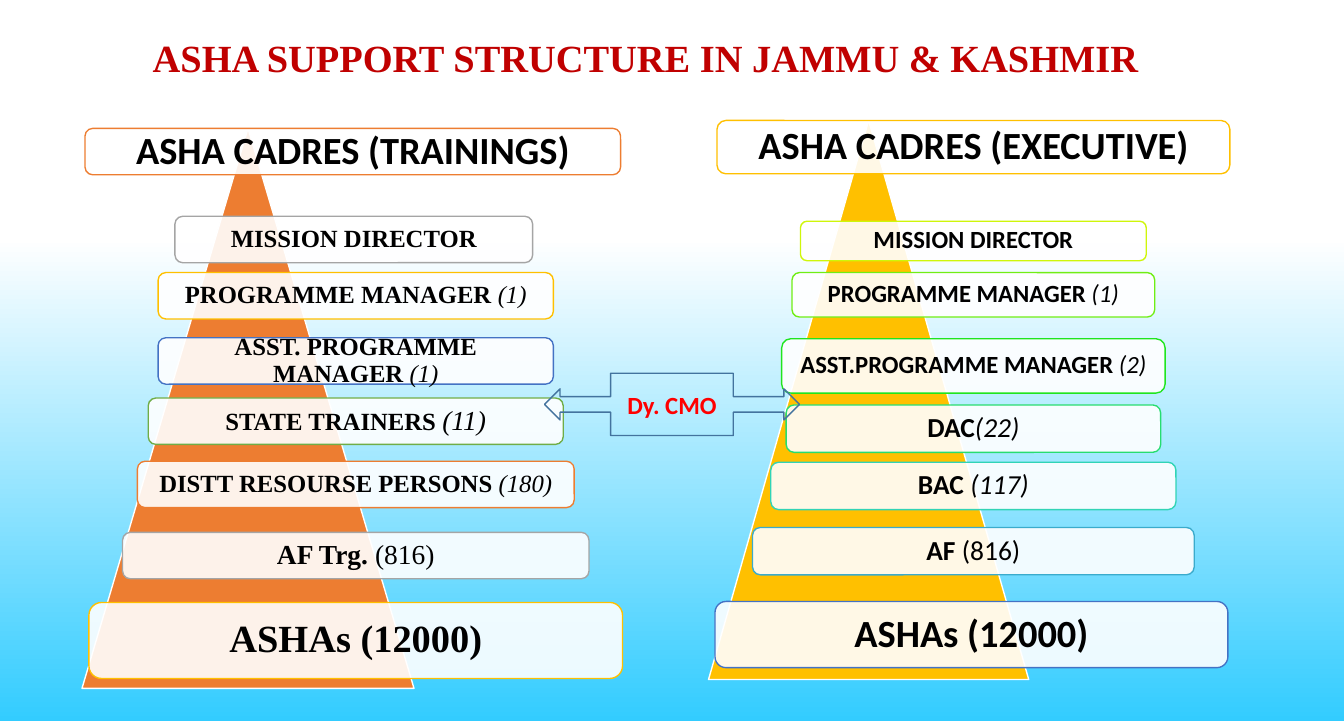
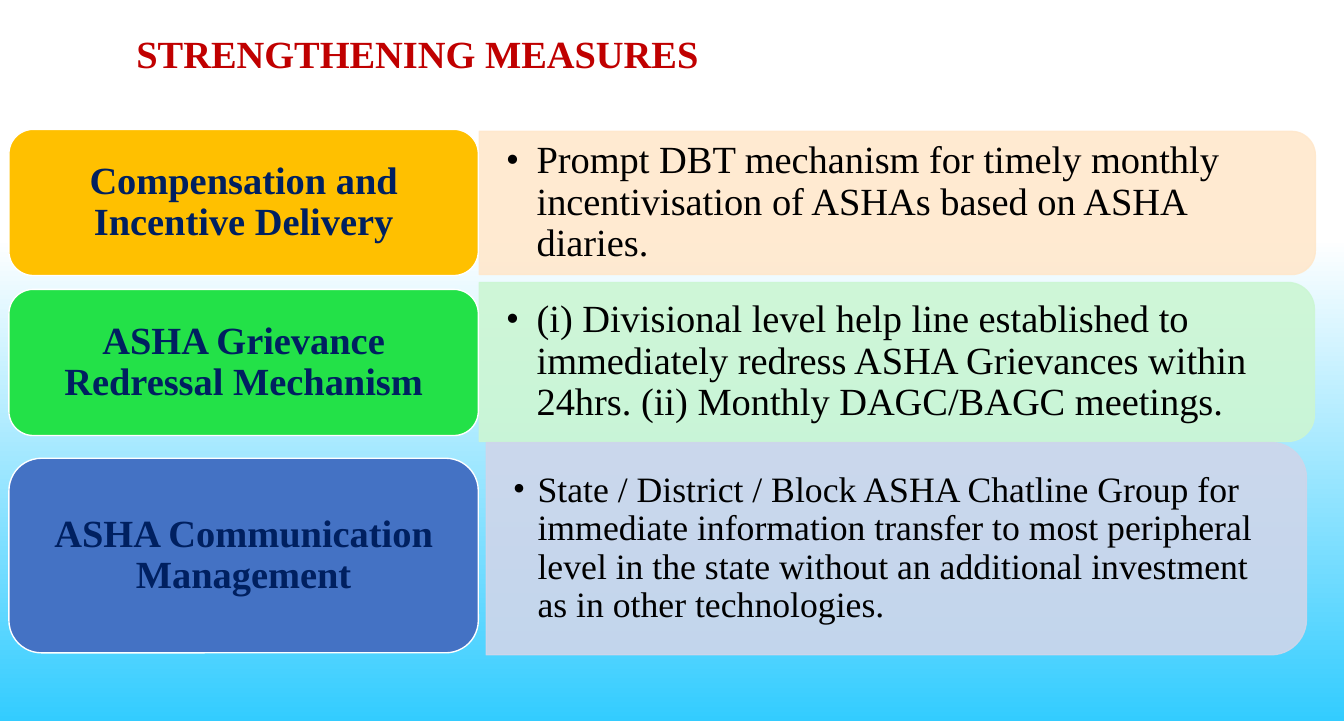
from dataclasses import dataclass
from typing import Optional

from lxml.etree import SubElement
from pptx import Presentation
from pptx.dml.color import RGBColor
from pptx.enum.shapes import MSO_SHAPE
from pptx.enum.text import MSO_ANCHOR, MSO_AUTO_SIZE, PP_ALIGN
from pptx.oxml.ns import qn
from pptx.util import Inches, Pt


# Theme
@dataclass(frozen=True)
class Theme:
    serif: str = "Times New Roman"
    sans: str = "Calibri"
    white: str = "FFFFFF"
    black: str = "000000"
    sky: str = "33CCFF"
    title: str = "C00000"
    navy: str = "002060"
    red: str = "FF0000"
    steel: str = "43739E"
    orange: str = "ED7D31"
    gold: str = "FFC000"
    grey: str = "A5A5A5"
    blue: str = "4472C4"
    green: str = "70AD47"
    large: int = 28
    list_small: int = 26
    medium: int = 20
    small: int = 18
    spacing: float = 0.9
    opacity: int = 90


T = Theme()


@dataclass(frozen=True)
class Tier:
    label: str
    count: str
    top: float
    width: float
    height: float
    line: str
    size: int = T.small
    count_size: Optional[int] = None
    count_italic: bool = True
    font: Optional[str] = None
    shift: float = 0


@dataclass(frozen=True)
class Pyramid:
    left: float
    top: float
    width: float
    height: float
    fill: str
    centre: float
    font: str
    tiers: tuple[Tier, ...]


@dataclass(frozen=True)
class Measure:
    label: str
    detail: str
    label_top: float
    label_height: float
    fill: str
    left: float
    top: float
    width: float
    height: float
    tint: str
    size: int = T.large
    indent: float = 0.31


PYRAMIDS = (
    Pyramid(0.83, 1.3, 3.36, 5.67, T.orange, 3.6, T.serif, (
        Tier("ASHA CADRES (TRAININGS)", "", 1.3, 5.42, 0.47, T.orange, T.large,
             font=T.sans, shift=-0.03),
        Tier("MISSION DIRECTOR", "", 2.19, 3.62, 0.47, T.grey, shift=-0.02),
        Tier("PROGRAMME MANAGER ", "(1)", 2.76, 4, 0.47, T.gold),
        Tier("ASST. PROGRAMME MANAGER ", "(1)", 3.42, 4, 0.47, T.blue),
        Tier("STATE TRAINERS ", "(11)", 4.03, 4.2, 0.47, T.green, count_size=T.medium),
        Tier("DISTT RESOURSE PERSONS ", "(180)", 4.67, 4.42, 0.47, T.orange),
        Tier("AF Trg. ", "(816)", 5.39, 4.72, 0.47, T.grey, T.medium, count_italic=False),
        Tier("ASHAs (12000)", "", 6.1, 5.4, 0.77, T.gold, T.large),
    )),
    Pyramid(7.17, 1.22, 3.24, 5.66, T.gold, 9.85, T.sans, (
        Tier("ASHA CADRES (EXECUTIVE)", "", 1.22, 5.19, 0.54, T.gold, T.large),
        Tier("MISSION DIRECTOR", "", 2.24, 3.5, 0.4, "CFF60A"),
        Tier("PROGRAMME MANAGER ", "(1)", 2.76, 3.67, 0.45, "70EE14"),
        Tier("ASST.PROGRAMME MANAGER ", "(2)", 3.43, 3.88, 0.55, "20E51E"),
        Tier("DAC", "(22)", 4.1, 3.79, 0.48, "27DD70", T.medium),
        Tier("BAC ", "(117)", 4.68, 4.1, 0.48, "31D4B6", T.medium),
        Tier("AF ", "(816)", 5.34, 4.47, 0.48, "3BABCC", T.medium, count_italic=False),
        Tier("ASHAs (12000)", "", 6.09, 5.19, 0.67, T.blue, T.large, shift=-0.02),
    )),
)

MEASURES = (
    Measure("Compensation and Incentive Delivery",
            "Prompt DBT mechanism for timely monthly incentivisation of ASHAs "
            "based on ASHA diaries.",
            1.31, 1.48, T.gold, 4.85, 1.33, 8.46, 1.45, "FFE8CC"),
    Measure("ASHA Grievance Redressal Mechanism",
            "(i) Divisional level help line established to immediately redress ASHA "
            "Grievances within 24hrs. (ii) Monthly DAGC/BAGC meetings.",
            2.93, 1.48, "23E148", 4.85, 2.86, 8.45, 1.61, "CCF6D3"),
    Measure("ASHA Communication Management",
            "State / District / Block ASHA Chatline Group for immediate information "
            "transfer to most peripheral level in the state without an additional "
            "investment as in other technologies.",
            4.64, 1.97, T.blue, 4.92, 4.48, 8.3, 2.15, "CFD6EA", T.list_small, 0.25),
)


# Text helpers
def add_text(p, text: str, *, size: int, font: str = T.serif, color: str = T.black,
             bold: bool = False, italic: bool = False) -> None:
    r = p.add_run()
    r.text = text
    f = r.font
    f.size, f.name, f.bold, f.italic = Pt(size), font, bold, italic
    f.color.rgb = RGBColor.from_string(color)


def set_frame(sp, *, inset_x: float = 0.1, inset_y: float = 0.05,
              anchor=MSO_ANCHOR.MIDDLE, align=PP_ALIGN.CENTER,
              spacing: float = T.spacing):
    """Prepare a shape's text frame and return its first paragraph."""
    tf = sp.text_frame
    tf.word_wrap, tf.auto_size, tf.vertical_anchor = True, MSO_AUTO_SIZE.NONE, anchor
    tf.margin_left = tf.margin_right = Inches(inset_x)
    tf.margin_top = tf.margin_bottom = Inches(inset_y)
    p = tf.paragraphs[0]
    p.alignment, p.line_spacing, p.space_before = align, spacing, Pt(0)
    return p


def add_bullet(p, indent: float) -> None:
    pPr = p._p.get_or_add_pPr()
    pPr.set("marL", str(Inches(indent)))
    pPr.set("indent", str(-Inches(indent)))
    SubElement(pPr, qn("a:buFont"), typeface="Times New Roman")
    SubElement(pPr, qn("a:buChar"), char="•")


# Shape helpers
def place(sp, left: float, top: float, width: float, height: float) -> None:
    sp.left, sp.top, sp.width, sp.height = map(Inches, (left, top, width, height))


def add_box(s, kind, left: float, top: float, width: float, height: float, *,
            line: str, fill: Optional[str] = None, fill_opacity: int = 100,
            line_opacity: int = 100):
    sp = s.shapes.add_shape(kind, *map(Inches, (left, top, width, height)))
    sp.shadow.inherit = False
    sp.line.width = Pt(1)
    sp.line.color.rgb = RGBColor.from_string(line)
    if fill is None:
        sp.fill.background()
    else:
        sp.fill.solid()
        sp.fill.fore_color.rgb = RGBColor.from_string(fill)
    spPr = sp._element.spPr
    for part, opacity in (("a:solidFill", fill_opacity), ("a:ln/a:solidFill", line_opacity)):
        if opacity < 100:
            clr = spPr.find("/".join(qn(tag) for tag in part.split("/")))[0]
            SubElement(clr, qn("a:alpha"), val=str(opacity * 1000))
    return sp


def add_title(s, text: str, left: float, top: float, width: float, height: float, *,
              align, spacing: float) -> None:
    sp = s.shapes.title
    place(sp, left, top, width, height)
    p = set_frame(sp, anchor=MSO_ANCHOR.TOP, align=align, spacing=spacing)
    add_text(p, text, size=T.large, color=T.title, bold=True)


def set_background(master) -> None:
    fill = master.background.fill
    fill.gradient()
    fill.gradient_angle = 270
    for stop, (position, color) in zip(fill.gradient_stops, ((0.33, T.white), (1, T.sky))):
        stop.position = position
        stop.color.rgb = RGBColor.from_string(color)


# Slide parts
def draw_pyramid(s, pyramid: Pyramid) -> None:
    add_box(s, MSO_SHAPE.ISOSCELES_TRIANGLE, pyramid.left, pyramid.top, pyramid.width,
            pyramid.height, fill=pyramid.fill, line=T.white)
    for tier in pyramid.tiers:
        left = pyramid.centre + tier.shift - tier.width / 2
        sp = add_box(s, MSO_SHAPE.ROUNDED_RECTANGLE, left, tier.top, tier.width, tier.height,
                     fill=T.white, line=tier.line, fill_opacity=T.opacity)
        inset = tier.size / 250
        p = set_frame(sp, inset_x=inset, inset_y=inset)
        font = tier.font or pyramid.font
        add_text(p, tier.label, size=tier.size, font=font, bold=True)
        if tier.count:
            add_text(p, tier.count, size=tier.count_size or tier.size, font=font,
                     italic=tier.count_italic)


def draw_measure(s, m: Measure, body) -> None:
    # Band lies on its side, so its upright frame swaps width and height
    band = add_box(s, MSO_SHAPE.ROUND_2_SAME_RECTANGLE,
                   m.left + (m.width - m.height) / 2, m.top + (m.height - m.width) / 2,
                   m.height, m.width, fill=m.tint, line=m.tint,
                   fill_opacity=T.opacity, line_opacity=T.opacity)
    band.rotation = 90

    # List text sits above the band, clear of its rounded corners
    pad = 0.05 * m.height
    place(body, m.left, m.top + pad, m.width - pad, m.height - 2 * pad)
    s.shapes._spTree.append(body._element)
    p = set_frame(body, inset_x=0.27, inset_y=0.14, align=PP_ALIGN.LEFT)
    add_bullet(p, m.indent)
    add_text(p, m.detail, size=m.size)

    label = add_box(s, MSO_SHAPE.ROUNDED_RECTANGLE, 0.09, m.label_top, 4.75, m.label_height,
                    fill=m.fill, line=T.white)
    p = set_frame(label, inset_x=0.12, inset_y=0.06)
    add_text(p, m.label, size=T.large, color=T.navy, bold=True)


def build_structure(prs) -> None:
    s = prs.slides.add_slide(prs.slide_layouts.get_by_name("Title Only"))
    add_title(s, "ASHA SUPPORT STRUCTURE IN JAMMU & KASHMIR", 1.33, 0.29, 10.4, 0.57,
              align=PP_ALIGN.CENTER, spacing=1.0)
    for pyramid in PYRAMIDS:
        draw_pyramid(s, pyramid)
    link = add_box(s, MSO_SHAPE.LEFT_RIGHT_ARROW_CALLOUT, 5.51, 3.78, 2.58, 0.63, line=T.steel)
    add_text(set_frame(link, spacing=1.0), "Dy. CMO", size=T.small, font=T.sans,
             color=T.red, bold=True)


def build_measures(prs) -> None:
    s = prs.slides.add_slide(prs.slide_layouts.get_by_name("Comparison"))
    add_title(s, "STRENGTHENING MEASURES", 1.28, 0.31, 10.59, 0.81,
              align=PP_ALIGN.LEFT, spacing=T.spacing)
    *bodies, spare = [ph for ph in s.placeholders if ph.placeholder_format.idx > 0]
    spare._element.getparent().remove(spare._element)
    for m, body in zip(MEASURES, bodies):
        draw_measure(s, m, body)


def main() -> None:
    prs = Presentation()
    prs.slide_width, prs.slide_height = Inches(13.6), Inches(7.3)
    set_background(prs.slide_master)
    build_structure(prs)
    build_measures(prs)
    prs.save("out.pptx")


if __name__ == "__main__":
    main()
